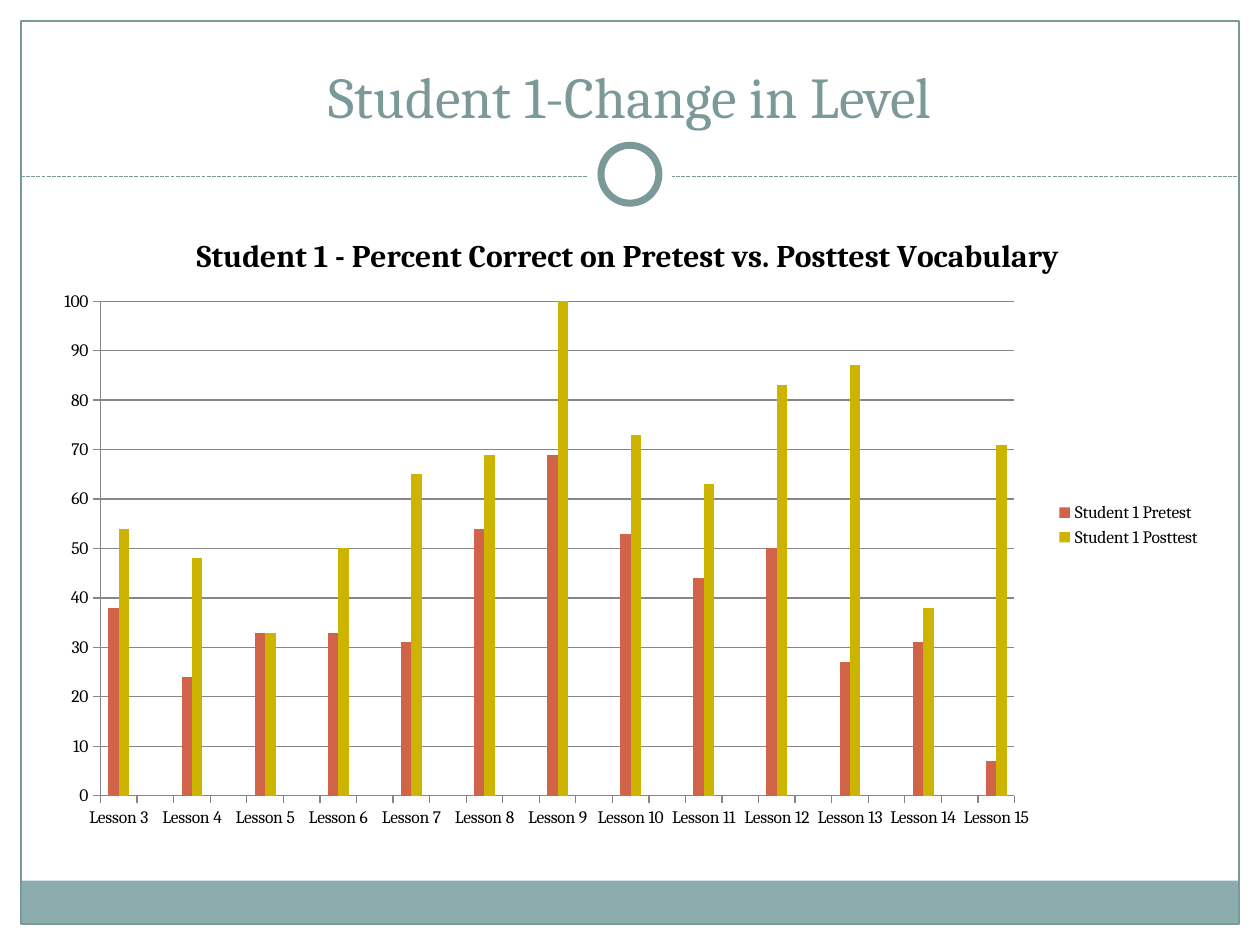
from dataclasses import dataclass
from typing import Optional

from lxml.etree import SubElement
from pptx import Presentation
from pptx.chart.data import CategoryChartData
from pptx.dml.color import RGBColor
from pptx.enum.chart import XL_CHART_TYPE, XL_LEGEND_POSITION, XL_TICK_MARK
from pptx.enum.dml import MSO_LINE
from pptx.enum.shapes import MSO_CONNECTOR, MSO_SHAPE
from pptx.enum.text import MSO_ANCHOR, MSO_AUTO_SIZE, PP_ALIGN
from pptx.oxml.ns import qn
from pptx.util import Emu, Inches, Pt

COLUMNS, ROWS = 60, 45
WIDTH, HEIGHT = Inches(10), Inches(7.5)


@dataclass(frozen=True)
class Theme:
    font: str = "Cambria"
    white: str = "FFFFFF"
    ink: str = "000000"
    accent: str = "7C999A"
    band: str = "8CADAE"
    pretest: str = "D16349"
    posttest: str = "CCB400"
    grid: str = "868686"
    title_size: float = 33
    chart_title_size: float = 18
    chart_size: float = 10
    thin: float = 0.75
    thick: float = 4


@dataclass(frozen=True)
class Area:
    column: float
    row: float
    columns: float
    rows: float

    def bounds(self) -> tuple:
        return (across(self.column), down(self.row), across(self.columns), down(self.rows))


@dataclass(frozen=True)
class Panel:
    area: Area
    fill: Optional[str] = None
    line: Optional[str] = None
    weight: float = 0
    kind: MSO_SHAPE = MSO_SHAPE.RECTANGLE


@dataclass(frozen=True)
class Lesson:
    number: int
    pretest: int
    posttest: int


THEME = Theme()
DIVIDER_ROW = 8.4

PANELS = [
    Panel(Area(0, 0, COLUMNS, 9.12), THEME.white),
    Panel(Area(0, 0, 1, ROWS), THEME.white),
    Panel(Area(COLUMNS - 1, 0, 1, ROWS), THEME.white),
    Panel(Area(1, 41.94, 58, 2.04), THEME.band),
    Panel(Area(1, 1, 58, 43), line=THEME.accent, weight=THEME.thin),
]
RINGS = [
    Panel(Area(28, 6.3, 4, 4), THEME.white, kind=MSO_SHAPE.OVAL),
    Panel(Area(28.62, 6.92, 2.76, 2.76), THEME.white, THEME.accent, THEME.thick, MSO_SHAPE.OVAL),
]

PRETEST = [38, 24, 33, 33, 31, 54, 69, 53, 44, 50, 27, 31, 7]
POSTTEST = [54, 48, 33, 50, 65, 69, 100, 73, 63, 83, 87, 38, 71]
LESSONS = [Lesson(*row) for row in zip(range(3, 16), PRETEST, POSTTEST)]


def across(columns: float) -> Emu:
    return Emu(round(WIDTH * columns / COLUMNS))


def down(rows: float) -> Emu:
    return Emu(round(HEIGHT * rows / ROWS))


def color(code: str) -> RGBColor:
    return RGBColor.from_string(code)


def style_font(font, size: float, code: str, bold: bool = False) -> None:
    font.name, font.size, font.bold = THEME.font, Pt(size), bold
    font.color.rgb = color(code)


def draw_panel(page, panel: Panel) -> None:
    shape = page.shapes.add_shape(panel.kind, *panel.area.bounds())
    shape.shadow.inherit = False
    if panel.fill:
        shape.fill.solid()
        shape.fill.fore_color.rgb = color(panel.fill)
    else:
        shape.fill.background()
    if panel.line:
        shape.line.color.rgb = color(panel.line)
        shape.line.width = Pt(panel.weight)
    else:
        shape.line.fill.background()


def draw_divider(page) -> None:
    height = down(DIVIDER_ROW)
    line = page.shapes.add_connector(
        MSO_CONNECTOR.STRAIGHT, across(1), height, across(COLUMNS - 1), height)
    line.line.color.rgb = color(THEME.accent)
    line.line.width = Pt(THEME.thin)
    line.line.dash_style = MSO_LINE.SQUARE_DOT
    SubElement(line.element.spPr, qn("a:effectLst"))


def write_title(page, text: str) -> None:
    title = page.shapes.title
    title.left, title.top, title.width, title.height = Area(2, 1.5, 56, 5).bounds()
    frame = title.text_frame
    frame.text = text
    frame.auto_size = MSO_AUTO_SIZE.NONE
    frame.vertical_anchor = MSO_ANCHOR.BOTTOM
    para = frame.paragraphs[0]
    para.alignment = PP_ALIGN.CENTER
    style_font(para.runs[0].font, THEME.title_size, THEME.accent)
    page.shapes.element.append(title.element)


def lesson_data() -> CategoryChartData:
    data = CategoryChartData()
    labels, before, after = [], [], []
    for lesson in LESSONS:
        labels += [f"Lesson {lesson.number}", ""]
        before += [lesson.pretest, None]
        after += [lesson.posttest, None]
    data.categories = labels[:-1]
    data.add_series("Student 1 Pretest", before[:-1])
    data.add_series("Student 1 Posttest", after[:-1])
    return data


def place_plot(chart, **shares: float) -> None:
    plot_area = chart.plots[0]._element.getparent()
    layout = plot_area.find(qn("c:layout"))
    if layout is None:
        layout = SubElement(plot_area, qn("c:layout"))
        plot_area.insert(0, layout)
    manual = SubElement(layout, qn("c:manualLayout"))
    settings = {"layoutTarget": "inner", "xMode": "edge", "yMode": "edge", **shares}
    for name, value in settings.items():
        SubElement(manual, qn(f"c:{name}")).set("val", str(value))


def draw_chart(page, heading: str) -> None:
    frame = page.shapes.add_chart(
        XL_CHART_TYPE.COLUMN_CLUSTERED, *Area(2, 10, 55.8, 30).bounds(), lesson_data())
    chart = frame.chart
    style_font(chart.font, THEME.chart_size, THEME.ink)
    chart.has_title = True
    chart.chart_title.include_in_layout = False
    chart.chart_title.text_frame.text = heading
    span = chart.chart_title.text_frame.paragraphs[0].runs[0]
    style_font(span.font, THEME.chart_title_size, THEME.ink, bold=True)
    chart.has_legend = True
    chart.legend.position = XL_LEGEND_POSITION.RIGHT
    chart.legend.include_in_layout = False

    plot = chart.plots[0]
    plot.gap_width, plot.overlap, plot.vary_by_categories = 150, 0, False
    for series, code in zip(plot.series, (THEME.pretest, THEME.posttest)):
        series.format.fill.solid()
        series.format.fill.fore_color.rgb = color(code)

    values = chart.value_axis
    values.minimum_scale, values.maximum_scale, values.major_unit = 0, 100, 10
    values.has_major_gridlines = True
    for axis in (chart.category_axis, values):
        axis.major_tick_mark = XL_TICK_MARK.OUTSIDE
        axis.minor_tick_mark = XL_TICK_MARK.NONE
    for part in (chart.category_axis, values, values.major_gridlines):
        part.format.line.color.rgb = color(THEME.grid)
        part.format.line.width = Pt(THEME.thin)
    place_plot(chart, x=0.05, y=0.145, w=0.78, h=0.785)


def main() -> None:
    deck = Presentation()
    deck.slide_width, deck.slide_height = WIDTH, HEIGHT
    page = deck.slides.add_slide(deck.slide_layouts[5])
    for panel in PANELS:
        draw_panel(page, panel)
    draw_divider(page)
    for ring in RINGS:
        draw_panel(page, ring)
    write_title(page, "Student 1-Change in Level")
    draw_chart(page, "Student 1 - Percent Correct on Pretest vs. Posttest Vocabulary")
    deck.save("out.pptx")


if __name__ == "__main__":
    main()
